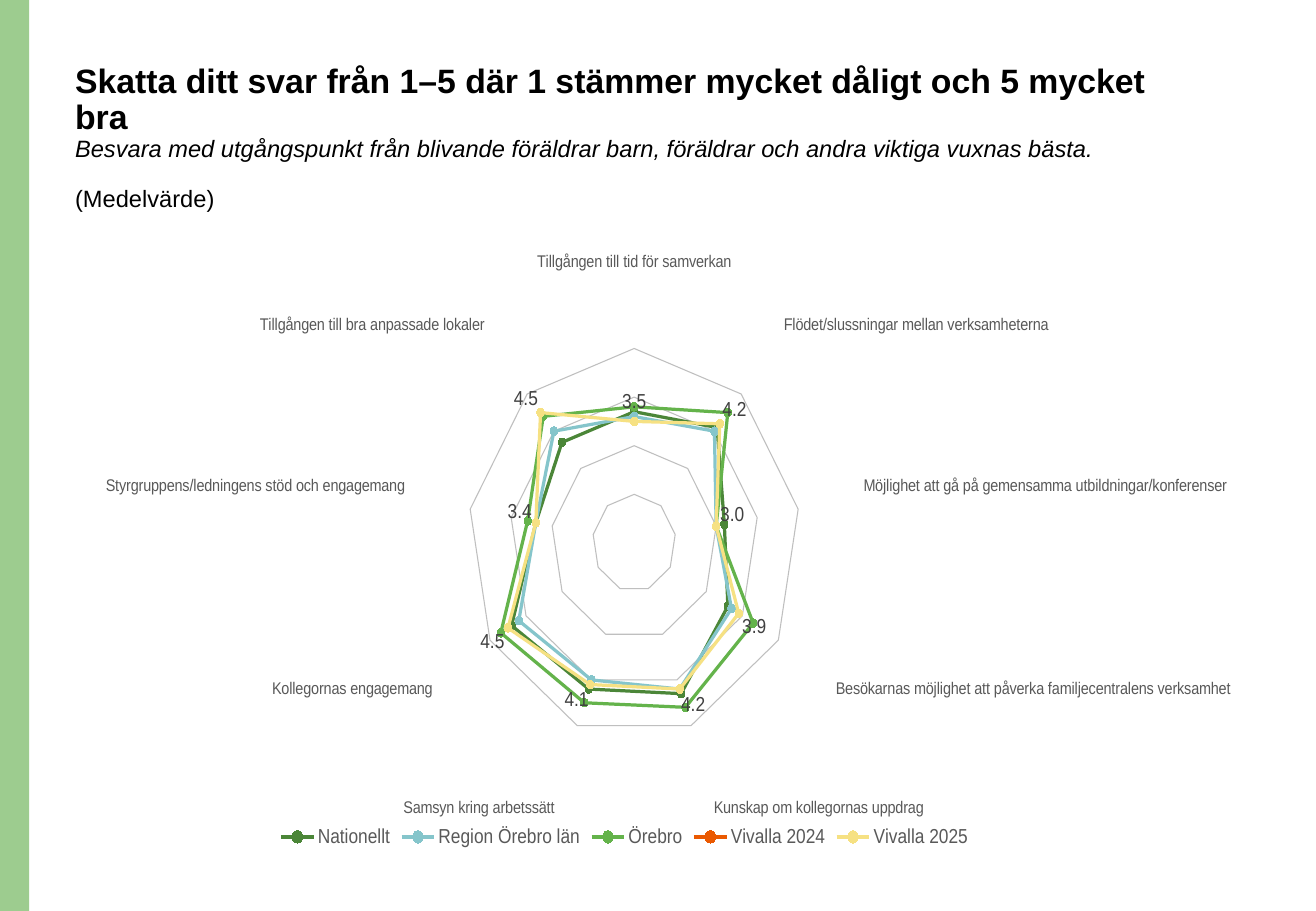
from typing import Any, NamedTuple, Optional

from lxml import etree
from pptx import Presentation
from pptx.chart.data import CategoryChartData
from pptx.dml.color import RGBColor
from pptx.enum.chart import XL_CHART_TYPE, XL_LEGEND_POSITION, XL_MARKER_STYLE, XL_TICK_MARK
from pptx.enum.shapes import MSO_SHAPE
from pptx.enum.text import MSO_ANCHOR
from pptx.util import Cm, Pt

RADAR = XL_CHART_TYPE.RADAR_MARKERS
BOTTOM = XL_LEGEND_POSITION.BOTTOM
CIRCLE = XL_MARKER_STYLE.CIRCLE
NO_TICK = XL_TICK_MARK.NONE
RECTANGLE = MSO_SHAPE.RECTANGLE
TOP = MSO_ANCHOR.TOP
CHART_NS = "http://schemas.openxmlformats.org/drawingml/2006/chart"
FONT = "Arial"


class TitleLine(NamedTuple):
    text: str
    size: float
    bold: bool = False
    italic: bool = False
    space_before: float = 0


class Group(NamedTuple):
    name: str
    color: str
    means: list[Optional[float]]


TITLE_LINES = [
    TitleLine("Skatta ditt svar från 1–5 där 1 stämmer mycket dåligt och 5 mycket bra", 20, bold=True),
    TitleLine("Besvara med utgångspunkt från blivande föräldrar barn, föräldrar och "
              "andra viktiga vuxnas bästa.", 14, italic=True),
    TitleLine("(Medelvärde)", 14, space_before=14.5),
]
QUESTIONS = [
    "Tillgången till tid för samverkan",
    "Tillgången till bra anpassade lokaler",
    "Styrgruppens/ledningens stöd och engagemang",
    "Kollegornas engagemang",
    "Samsyn kring arbetssätt",
    "Kunskap om kollegornas uppdrag",
    "Besökarnas möjlighet att påverka familjecentralens verksamhet",
    "Möjlighet att gå på gemensamma utbildningar/konferenser",
    "Flödet/slussningar mellan verksamheterna",
]
GROUPS = [
    Group("Nationellt", "4B8638", [3.7, 3.7, 3.4, 4.4, 4.2, 4.3, 3.6, 3.2, 4.1]),
    Group("Region Örebro län", "85C5CB", [3.6, 4, 3.4, 4.2, 4, 4.2, 3.7, 3, 4]),
    Group("Örebro", "64B34B", [3.8, 4.4, 3.6, 4.7, 4.5, 4.6, 4.3, 3, 4.5]),
    Group("Vivalla 2024", "EA5901", [None] * len(QUESTIONS)),
    Group("Vivalla 2025", "F6E183", [3.5, 4.5, 3.4, 4.5, 4.1, 4.2, 3.9, 3, 4.2]),
]
PLOT_LAYOUT = {"x": 0.3, "y": 0.1, "w": 0.42, "h": 0.81}


def rgb(color: str) -> RGBColor:
    return RGBColor.from_string(color)


def set_values(target: Any, values: dict[str, Any]) -> None:
    for name, value in values.items():
        setattr(target, name, value)


def set_font(font: Any, size: float, color: str, bold: bool = False, italic: bool = False) -> None:
    set_values(font, {"name": FONT, "size": Pt(size), "bold": bold, "italic": italic})
    font.color.rgb = rgb(color)


def set_fill(fill: Any, color: str) -> None:
    fill.solid()
    fill.fore_color.rgb = rgb(color)


def set_line(line: Any, color: str, width: float) -> None:
    set_fill(line.fill, color)
    line.width = Pt(width)


def add_side_band(page: Any, height: int) -> None:
    band = page.shapes.add_shape(RECTANGLE, 0, 0, Cm(0.61), height)
    band.shadow.inherit = False
    set_fill(band.fill, "9DCC8F")
    band.line.fill.background()


def add_title(page: Any) -> None:
    box = page.shapes.add_textbox(Cm(1.32), Cm(1.22), Cm(23.72), Cm(2.74))
    frame = box.text_frame
    set_values(frame, {"word_wrap": True, "vertical_anchor": TOP})
    for index, line in enumerate(TITLE_LINES):
        para = frame.add_paragraph() if index else frame.paragraphs[0]
        set_values(para, {"line_spacing": 0.9, "space_before": Pt(line.space_before)})
        span = para.add_run()
        span.text = line.text
        set_font(span.font, line.size, "000000", line.bold, line.italic)


def place_plot(chart: Any) -> None:
    plot_area = chart.plots[0]._element.getparent()
    for old in plot_area.findall(f"{{{CHART_NS}}}layout"):
        plot_area.remove(old)
    layout = etree.Element(f"{{{CHART_NS}}}layout")
    manual = etree.SubElement(layout, f"{{{CHART_NS}}}manualLayout")
    settings = {"layoutTarget": "inner", "xMode": "edge", "yMode": "edge", **PLOT_LAYOUT}
    for name, value in settings.items():
        etree.SubElement(manual, f"{{{CHART_NS}}}{name}", val=str(value))
    plot_area.insert(0, layout)


def style_axes(chart: Any) -> None:
    questions = chart.category_axis
    set_values(questions, {"reverse_order": True, "major_tick_mark": NO_TICK,
                           "minor_tick_mark": NO_TICK, "has_major_gridlines": True})
    set_font(questions.tick_labels.font, 10, "595959")
    set_line(questions.format.line, "000000", 0.75)
    set_line(questions.major_gridlines.format.line, "D9D9D9", 0.75)

    scale = chart.value_axis
    set_values(scale, {"visible": False, "minimum_scale": 1, "maximum_scale": 5.9,
                       "major_unit": 1, "has_major_gridlines": True})
    set_line(scale.major_gridlines.format.line, "BFBFBF", 0)


def add_radar(page: Any) -> None:
    data = CategoryChartData(number_format="#,##0.0")
    data.categories = QUESTIONS
    for group in GROUPS:
        data.add_series(group.name, group.means)
    chart = page.shapes.add_chart(RADAR, Cm(2.21), Cm(4.75), Cm(23.72), Cm(13.08), data).chart
    set_values(chart, {"has_title": False, "has_legend": True})
    set_font(chart.font, 10, "000000")
    place_plot(chart)
    style_axes(chart)

    # Legend
    set_values(chart.legend, {"position": BOTTOM, "include_in_layout": False})
    set_font(chart.legend.font, 12, "595959")

    # Lines and markers
    plot = chart.plots[0]
    plot.vary_by_categories = False
    for group, series in zip(GROUPS, plot.series):
        set_line(series.format.line, group.color, 2.25)
        set_values(series.marker, {"style": CIRCLE, "size": 5})
        set_fill(series.marker.format.fill, group.color)
        set_line(series.marker.format.line, group.color, 0.75)

    # Values of the latest group
    labels = plot.series[len(GROUPS) - 1].data_labels
    set_values(labels, {"show_value": True, "number_format": "#,##0.0",
                        "number_format_is_linked": False})
    set_font(labels.font, 12, "404040")


def main() -> None:
    deck = Presentation()
    set_values(deck, {"slide_width": Cm(27.51), "slide_height": Cm(19.05)})
    page = deck.slides.add_slide(deck.slide_layouts[6])
    add_side_band(page, deck.slide_height)
    add_title(page)
    add_radar(page)
    deck.save("out.pptx")


if __name__ == "__main__":
    main()
